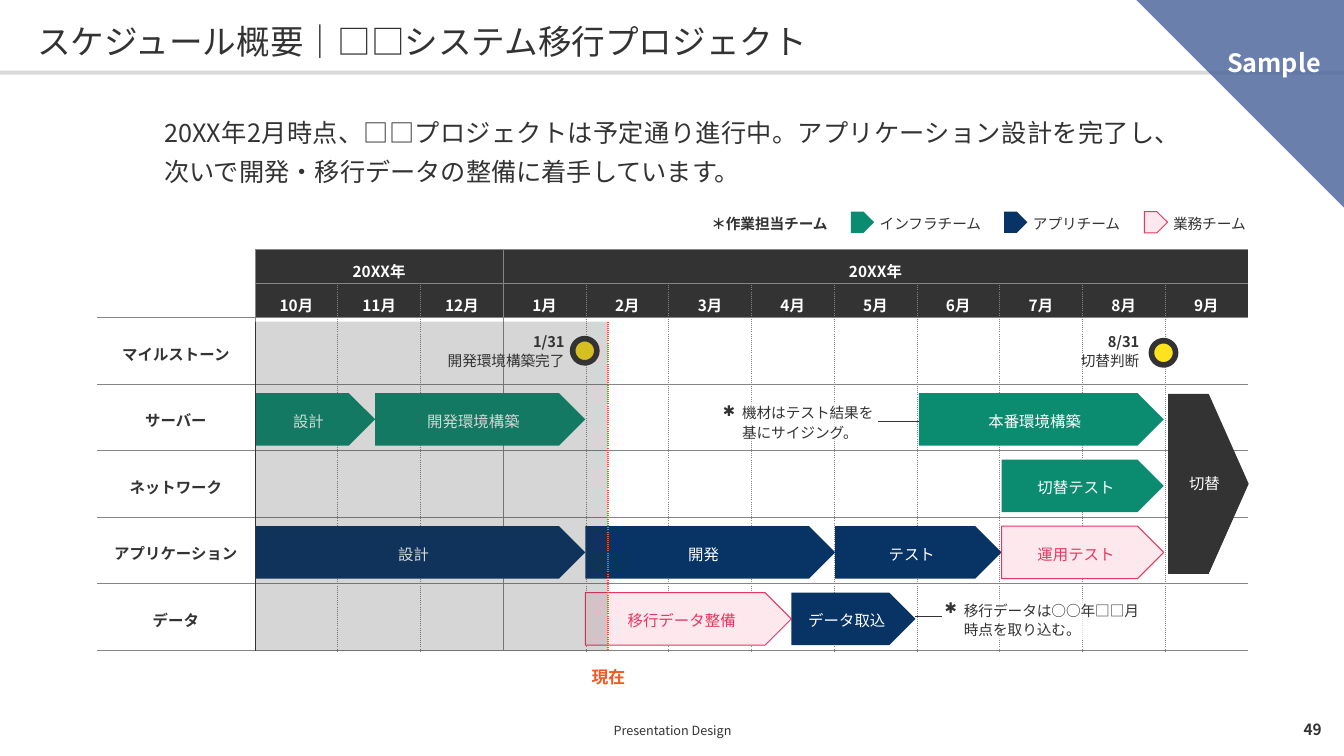
from dataclasses import dataclass

from lxml.etree import SubElement
from pptx import Presentation
from pptx.dml.color import RGBColor
from pptx.enum.shapes import MSO_CONNECTOR, MSO_SHAPE
from pptx.enum.text import MSO_ANCHOR, PP_ALIGN
from pptx.oxml.ns import qn
from pptx.util import Inches, Pt


@dataclass(frozen=True)
class Theme:
    font: str = "Noto Sans CJK JP"
    ink: str = "333333"
    white: str = "FFFFFF"
    rule: str = "D9D9D9"
    grid: str = "858585"
    infra: str = "0B8B70"
    app: str = "073365"
    business: str = "FCE8ED"
    business_edge: str = "E63760"
    now: str = "F7581D"
    milestone: str = "FEE21D"
    corner: str = "466098"
    title: float = 24
    lead: float = 18
    now_size: float = 12
    label: float = 11
    note: float = 10.5
    footer: float = 9


THEME = Theme()
COLUMNS, ROWS = 133.3, 75
CHART_LEFT, CHART_TOP, CHART_RIGHT, LABEL_WIDTH = 9.6, 24.7, 123.8, 15.7
MONTH = (CHART_RIGHT - CHART_LEFT - LABEL_WIDTH) / 12
LANE_TOP, LANE, BAR_HEIGHT = 39, 6.6, 5.2
HEADER_ROWS = [2.4, 2.5]
NO_MARGIN = (0, 0, 0, 0)
CELL_MARGIN = (1, 0.8, 1, 0.6)
BAR_MARGIN = (0.8, 0.8, 0.8, 0.6)
LEFT, CENTER, RIGHT = PP_ALIGN.LEFT, PP_ALIGN.CENTER, PP_ALIGN.RIGHT
TOP, MIDDLE = MSO_ANCHOR.TOP, MSO_ANCHOR.MIDDLE
TEAMS = {
    "infra": (THEME.infra, None, THEME.white),
    "app": (THEME.app, None, THEME.white),
    "business": (THEME.business, (THEME.business_edge, 0.75), THEME.business_edge),
}


def unit(count):
    return Inches(count / 10)


def month_at(month):
    return CHART_LEFT + LABEL_WIDTH + MONTH * month


def assign(target, values):
    for name, value in values.items():
        setattr(target, name, value)


class Board:
    def __init__(self, deck, theme):
        self.theme = theme
        self.page = deck.slides.add_slide(deck.slide_layouts[6])
        self.shapes = self.page.shapes

    def paint(self, fill, color, opacity=100):
        if color is None:
            fill.background()
            return
        fill.solid()
        fill.fore_color.rgb = RGBColor.from_string(color)
        if opacity < 100:
            tint = fill._xPr.find(qn("a:solidFill"))[0]
            SubElement(tint, qn("a:alpha"), val=str(opacity * 1000))

    def outline(self, line, edge):
        if edge is None:
            line.fill.background()
            return
        self.paint(line.fill, edge[0])
        line.width = Pt(edge[1])

    def compose(self, holder, lines, size, color=THEME.ink, bold=False, align=LEFT,
                spacing=1.1, margin=NO_MARGIN, anchor=TOP, wrap=True, bullet=None):
        frame = holder.text_frame
        sides = ("margin_left", "margin_top", "margin_right", "margin_bottom")
        framed = dict(zip(sides, map(unit, margin)), vertical_anchor=anchor)
        assign(frame if holder in self.shapes else holder, framed)
        frame.word_wrap = wrap
        for index, text in enumerate(lines):
            para = frame.add_paragraph() if index else frame.paragraphs[0]
            assign(para, {"alignment": align, "line_spacing": spacing})
            if bullet:
                properties = para._p.get_or_add_pPr()
                properties.set("marL", str(unit(1.9)))
                properties.set("indent", str(-unit(1.9)))
                SubElement(properties, qn("a:buChar"), char=bullet)
            if not text:
                SubElement(para._p, qn("a:endParaRPr"), sz=str(int(size * 100)))
                continue
            span = para.add_run()
            span.text = text
            heavy = bold if isinstance(bold, bool) else bold[index]
            assign(span.font, {"name": self.theme.font, "size": Pt(size), "bold": heavy})
            span.font.color.rgb = RGBColor.from_string(color)
            SubElement(span._r.rPr, qn("a:ea"), typeface=self.theme.font)

    def text(self, place, lines, size, fill=None, opacity=100, **style):
        box = self.shapes.add_textbox(*map(unit, place))
        self.paint(box.fill, fill, opacity)
        self.compose(box, lines, size, **style)

    def shape(self, kind, place, fill, edge=None):
        form = self.shapes.add_shape(kind, *map(unit, place))
        form.shadow.inherit = False
        self.paint(form.fill, fill)
        self.outline(form.line, edge)
        return form

    def bar(self, lane, start, end, team, label):
        fill, edge, ink = TEAMS[team]
        place = (month_at(start), LANE_TOP + LANE * lane, MONTH * (end - start), BAR_HEIGHT)
        form = self.shape(MSO_SHAPE.PENTAGON, place, fill, edge)
        self.compose(form, [label], self.theme.label, color=ink, align=CENTER,
                     margin=BAR_MARGIN, anchor=MIDDLE)

    def leader(self, start, end, row):
        line = self.shapes.add_connector(
            MSO_CONNECTOR.STRAIGHT, *map(unit, (start, row, end, row)))
        self.outline(line.line, (self.theme.ink, 0.5))
        SubElement(line._element.spPr, qn("a:effectLst"))

    def corner(self, label):
        side = 20.6
        builder = self.shapes.build_freeform(unit(COLUMNS - side), 0)
        builder.add_line_segments([(unit(COLUMNS), 0), (unit(COLUMNS), unit(side))])
        form = builder.convert_to_shape()
        form.shadow.inherit = False
        self.paint(form.fill, self.theme.corner, 80)
        self.outline(form.line, None)
        self.compose(form, [label], self.theme.lead, color=self.theme.white, bold=True,
                     align=CENTER, spacing=1, margin=(6.7, 4.7, 0, 0), wrap=False)

    def table(self, place, widths, heights):
        table = self.shapes.add_table(len(heights), len(widths), *map(unit, place)).table
        assign(table, {"first_row": False, "horz_banding": False})
        for column, width in zip(table.columns, widths):
            column.width = unit(width)
        for row, height in zip(table.rows, heights):
            row.height = unit(height)
        return table

    def borders(self, cell, **edges):
        properties = cell._tc.get_or_add_tcPr()
        for side in "LRTB":
            color, width, dash = edges.get(side) or (None, 0, None)
            line = SubElement(properties, qn("a:ln" + side), w=str(Pt(width)))
            if color is None:
                SubElement(line, qn("a:noFill"))
                continue
            SubElement(SubElement(line, qn("a:solidFill")), qn("a:srgbClr"), val=color)
            SubElement(line, qn("a:prstDash"), val=dash)

    def schedule(self, years, months, tasks):
        grid = self.theme.grid
        blank = [""] * 12
        header = [""] * 13
        for start, end, year in years:
            header[start] = year
        content = [header, [""] + months] + [[task] + blank for task in tasks]
        heights = HEADER_ROWS + [LANE] * len(tasks)
        place = (CHART_LEFT, CHART_TOP, CHART_RIGHT - CHART_LEFT, sum(heights))
        table = self.table(place, [LABEL_WIDTH] + [MONTH] * 12, heights)

        def upright(row, edge):
            if edge in (1, 4):
                return grid, 0.5, "solid"
            return (grid, 0.5, "dot") if row and 1 < edge < 13 else None

        def level(edge, column):
            if edge >= 2:
                return grid, 0.75, "solid"
            return (grid, 0.5, "solid") if column else None

        for row, labels in enumerate(content):
            for column, label in enumerate(labels):
                cell = table.cell(row, column)
                dark = row < 2 and column > 0
                self.borders(cell, L=upright(row, column), R=upright(row, column + 1),
                             T=level(row, column), B=level(row + 1, column))
                self.paint(cell.fill, self.theme.ink if dark else None)
                self.compose(cell, [label], self.theme.label, bold=True, align=CENTER,
                             color=self.theme.white if dark else self.theme.ink,
                             margin=CELL_MARGIN, anchor=MIDDLE)
        for start, end, year in years:
            table.cell(0, start).merge(table.cell(0, end))

    def elapsed(self):
        cell = self.table((month_at(0), 31.9, 35, 32.7), [35], [32.7]).cell(0, 0)
        self.borders(cell, L=(self.theme.ink, 0.5, "solid"), R=(self.theme.now, 1.5, "sysDot"))
        self.paint(cell.fill, self.theme.ink, 20)


def main():
    deck = Presentation()
    assign(deck, {"slide_width": unit(COLUMNS), "slide_height": unit(ROWS)})
    board = Board(deck, THEME)

    board.shape(MSO_SHAPE.RECTANGLE, (0, 7, COLUMNS, 0.4), THEME.rule)
    board.text((3.7, 1.7, 126, 4.3), ["スケジュール概要｜□□システム移行プロジェクト"],
               THEME.title, anchor=MIDDLE)
    board.text((9.6, 71, 114.2, 2.9), ["Presentation Design"], THEME.footer,
               align=CENTER, spacing=1, anchor=MIDDLE)
    board.text((126.1, 71, 5, 2.8), ["49"], THEME.label, bold=True, align=RIGHT,
               spacing=1, anchor=MIDDLE)

    board.schedule([(1, 3, "20XX年"), (4, 12, "20XX年")],
                   [f"{(month + 9) % 12 + 1}月" for month in range(12)],
                   ["マイルストーン", "サーバー", "ネットワーク", "アプリケーション", "データ"])

    for bar in [
        (0, 0, 1.45, "infra", "設計"), (0, 1.45, 3.99, "infra", "開発環境構築"),
        (0, 8.02, 10.98, "infra", "本番環境構築"), (1, 9.02, 10.98, "infra", "切替テスト"),
        (2, 0, 3.99, "app", "設計"), (2, 3.99, 7.01, "app", "開発"),
        (2, 7.01, 9.02, "app", "テスト"), (2, 9.02, 10.98, "business", "運用テスト"),
        (3, 3.99, 6.48, "business", "移行データ整備"), (3, 6.48, 7.98, "app", "データ取込"),
    ]:
        board.bar(*bar)
    cutover = board.shape(MSO_SHAPE.PENTAGON, (115.9, 39.1, 7.9, 17.8), THEME.ink, (THEME.ink, 0.5))
    board.compose(cutover, ["切替"], THEME.label, color=THEME.white, align=CENTER, spacing=1,
                  margin=(2, 0.6, 0.8, 0.6), anchor=MIDDLE)

    board.text((54.8, 65.5, 11.1, 2.5), ["現在"], THEME.now_size, fill=THEME.white, opacity=80,
               color=THEME.now, bold=True, align=CENTER, spacing=1.3)
    for left, top, text_left, width, lines in [
        (56.8, 33.6, 42.4, 13.6, ["1/31", "開発環境構築完了"]),
        (114.2, 33.8, 106.8, 6.2, ["8/31", "切替判断"]),
    ]:
        board.shape(MSO_SHAPE.OVAL, (left, top, 2.4, 2.4), THEME.milestone, (THEME.ink, 4))
        board.text((text_left, 32.8, width, 3.9), lines, THEME.note,
                   bold=[True, False], align=RIGHT)
    for place, note, leader in [
        ((71.7, 39.9, 15, 3.9), "機材はテスト結果を基にサイジング。", (87.1, 91.1, 41.8)),
        ((93.7, 59.5, 19.4, 3.9), "移行データは○○年□□月時点を取り込む。", (90.8, 93.4, 61.1)),
    ]:
        board.text(place, [note], THEME.note, fill=THEME.white, opacity=70, bullet="✱")
        board.leader(*leader)

    board.text((69.8, 21.1, 12.3, 1.8), ["＊作業担当チーム"], THEME.note, bold=True, align=RIGHT)
    for left, width, team, label in [
        (84.4, 11.8, "infra", "インフラチーム"),
        (99.6, 11.8, "app", "アプリチーム"),
        (113.5, 7.4, "business", "業務チーム"),
    ]:
        board.shape(MSO_SHAPE.PENTAGON, (left, 21, 2.3, 2.1), *TEAMS[team][:2])
        board.text((left + 2.85, 21.1, width, 1.9), [label], THEME.note)

    board.elapsed()
    board.text((16.3, 10.7, 100.8, 7.6),
               ["20XX年2月時点、□□プロジェクトは予定通り進行中。アプリケーション設計を完了し、"
                "次いで開発・移行データの整備に着手しています。"],
               THEME.lead, align=PP_ALIGN.JUSTIFY, spacing=1.3)
    board.corner("Sample")
    deck.save("out.pptx")


if __name__ == "__main__":
    main()
